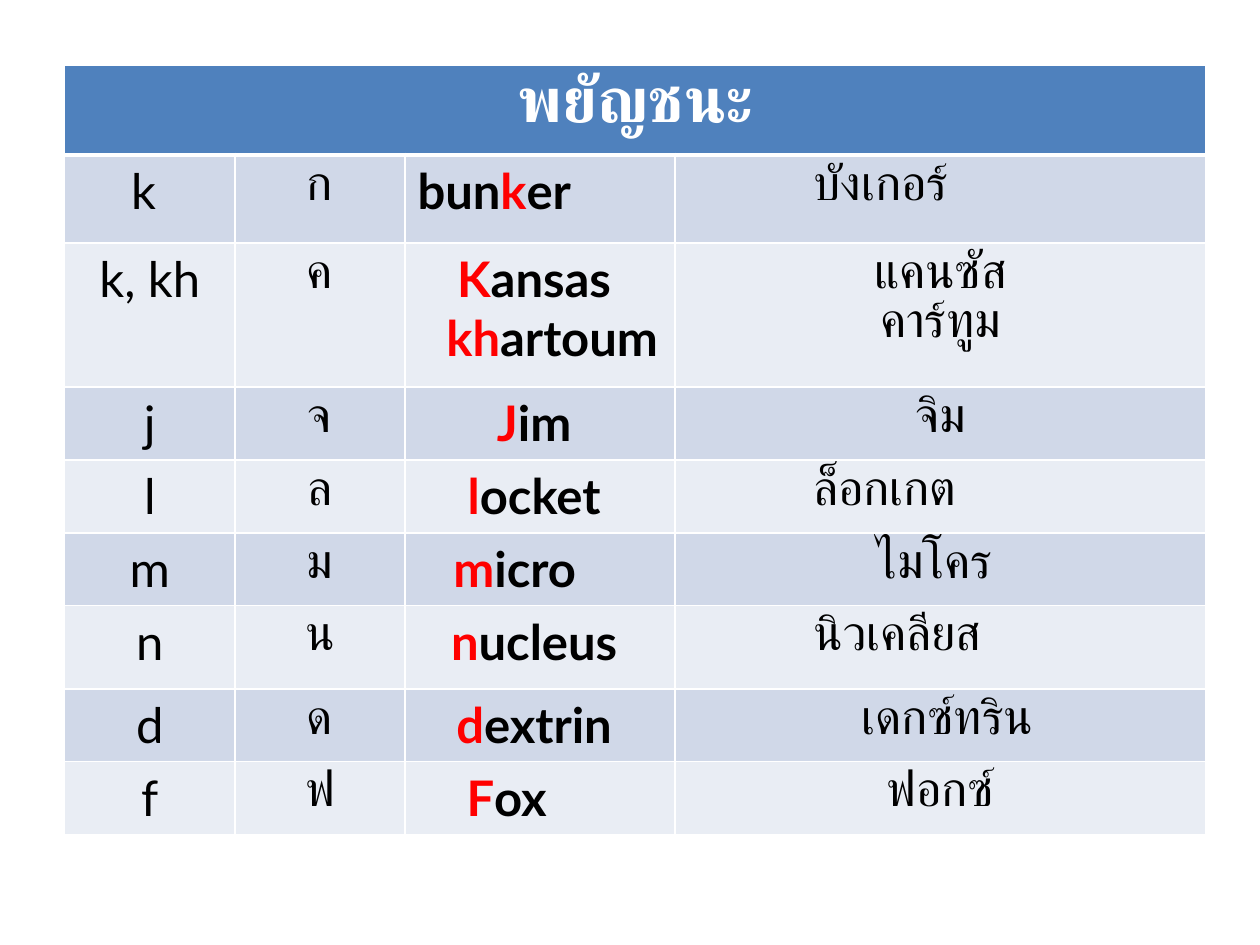
from lxml.etree import SubElement
from pptx import Presentation
from pptx.dml.color import RGBColor
from pptx.enum.text import PP_ALIGN
from pptx.oxml import parse_xml
from pptx.oxml.ns import nsdecls
from pptx.util import Pt

# Content: an indent of None means centred, a number means left-aligned by that many points
TITLE = "พยัญชนะ"
# latin letters, Thai letter, words (before, highlight, after, indent), Thai words (text, indent)
ROWS = [
    ("k ", "ก", [("bun", "k", "er", 0)], [("บังเกอร์", 72)]),
    ("k, kh", "ค", [("", "K", "ansas ", None), ("", "kh", "artoum", 16.5)],
     [("แคนซัส", None), (" คาร์ทูม ", None)]),
    ("j", "จ", [("", "J", "im ", None)], [("จิม", None)]),
    ("l", "ล", [("", "l", "ocket ", None)], [("ล็อกเกต", 72)]),
    ("m", "ม", [("", "m", "icro", 20.5)], [("ไมโคร ", None)]),
    ("n", "น", [("", "n", "ucleus ", None)], [("นิวเคลียส", 72)]),
    ("d", "ด", [("", "d", "extrin ", None)], [("เดกซ์ทริน", 99.5)]),
    ("f", "ฟ", [("", "F", "ox", 28)], [(" ฟอกซ์ ", None)]),
]

THEME = {
    "font": "Lato", "title_size": 36, "body_size": 28,
    "header": "4F81BD", "bands": ("D0D8E8", "E9EDF4"),
    "white": "FFFFFF", "text": "000000", "highlight": "FF0000",
}
LEFT, TOP = 37, 37.5
COLUMN_WIDTHS = [97.2, 97.2, 154.4, 303.2]
ROW_HEIGHTS = [51, 50.5, 82.3, 41.6, 41.6, 41.6, 47.6, 41.6, 41.6]
THIN, THICK = 1, 3


def style_cell(cell, fill, top=THIN, bottom=THIN):
    cell.fill.solid()
    cell.fill.fore_color.rgb = RGBColor.from_string(fill)
    properties = cell._tc.get_or_add_tcPr()
    sides = [("lnL", THIN), ("lnR", THIN), ("lnT", top), ("lnB", bottom)]
    for position, (side, width) in enumerate(sides):
        line = parse_xml(f'<a:{side} {nsdecls("a")} w="{Pt(width)}"/>')
        namespace = "{" + line.nsmap["a"] + "}"
        solid = SubElement(line, namespace + "solidFill")
        SubElement(solid, namespace + "srgbClr", val=THEME["white"])
        properties.insert(position, line)


def write_cell(cell, lines, size=THEME["body_size"]):
    """Each line is (runs, indent); each run is (text, colour, bold)."""
    text_frame = cell.text_frame
    for number, (runs, indent) in enumerate(lines):
        paragraph = text_frame.add_paragraph() if number else text_frame.paragraphs[0]
        paragraph.alignment = PP_ALIGN.CENTER if indent is None else PP_ALIGN.LEFT
        if indent:
            paragraph._p.get_or_add_pPr().set("marL", str(Pt(indent)))
        for text, colour, bold in runs:
            if text:
                run = paragraph.add_run()
                run.text = text
                run.font.name = THEME["font"]
                run.font.size = Pt(size)
                run.font.bold = bold
                run.font.color.rgb = RGBColor.from_string(THEME[colour])


def main():
    presentation = Presentation()
    presentation.slide_width, presentation.slide_height = Pt(720), Pt(540)
    slide = presentation.slides.add_slide(presentation.slide_layouts[6])

    # Table grid
    table = slide.shapes.add_table(
        len(ROW_HEIGHTS), len(COLUMN_WIDTHS), Pt(LEFT), Pt(TOP),
        Pt(sum(COLUMN_WIDTHS)), Pt(sum(ROW_HEIGHTS))).table
    for column, width in zip(table.columns, COLUMN_WIDTHS):
        column.width = Pt(width)
    for row, height in zip(table.rows, ROW_HEIGHTS):
        row.height = Pt(height)

    # Header across all columns
    header = table.cell(0, 0)
    header.merge(table.cell(0, len(COLUMN_WIDTHS) - 1))
    for cell in table.rows[0].cells:
        style_cell(cell, THEME["header"], bottom=THICK)
    write_cell(header, [([(TITLE, "white", True)], None)], THEME["title_size"])

    # Banded consonant rows
    for number, (latin, thai, words, thai_words) in enumerate(ROWS, start=1):
        columns = [
            [([(latin, "text", False)], None)],
            [([(thai, "text", False)], None)],
            [([(before, "text", True), (marked, "highlight", True), (after, "text", True)], indent)
             for before, marked, after, indent in words],
            [([(text, "text", False)], indent) for text, indent in thai_words],
        ]
        for cell, lines in zip(table.rows[number].cells, columns):
            style_cell(cell, THEME["bands"][(number - 1) % 2],
                       top=THICK if number == 1 else THIN)
            write_cell(cell, lines)

    presentation.save("out.pptx")


if __name__ == "__main__":
    main()
